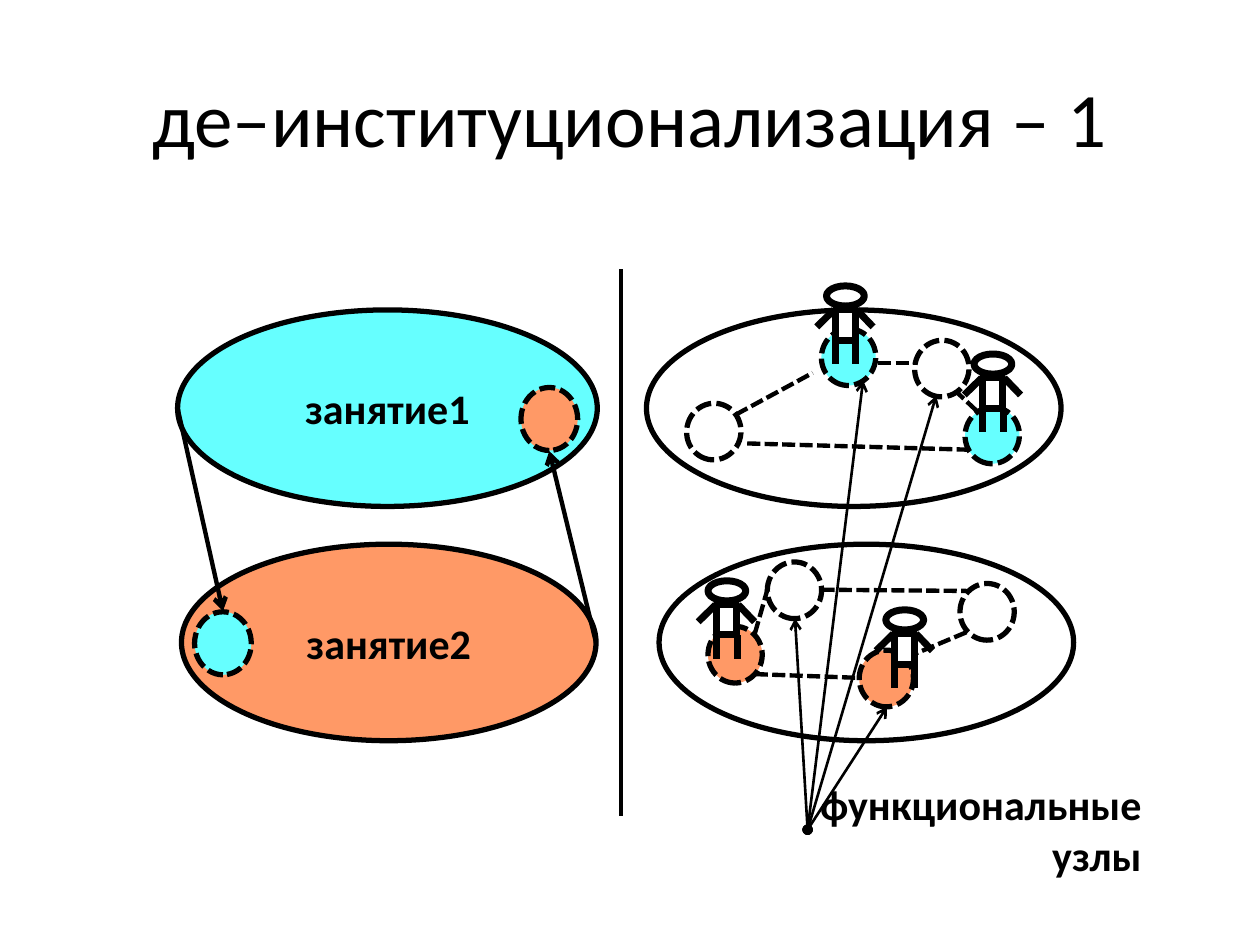
from dataclasses import dataclass
from typing import NamedTuple, Optional

from lxml import etree
from pptx import Presentation
from pptx.dml.color import RGBColor
from pptx.enum.dml import MSO_LINE
from pptx.enum.shapes import MSO_CONNECTOR, MSO_SHAPE
from pptx.enum.text import MSO_ANCHOR, PP_ALIGN
from pptx.oxml.ns import qn
from pptx.util import Pt

OVAL, RECTANGLE = MSO_SHAPE.OVAL, MSO_SHAPE.RECTANGLE
STRAIGHT = MSO_CONNECTOR.STRAIGHT
DASH = MSO_LINE.SQUARE_DOT
CENTER, RIGHT = PP_ALIGN.CENTER, PP_ALIGN.RIGHT
MIDDLE = MSO_ANCHOR.MIDDLE
LEFT_SIDE = 1


@dataclass(frozen=True)
class Theme:
    font: str = "Calibri"
    ink: str = "000000"
    paper: str = "FFFFFF"
    cyan: str = "66FFFF"
    orange: str = "FF9966"
    title_size: float = 44
    label_size: float = 24
    outline: float = 3
    link: float = 2.5
    divider: float = 2.25
    pointer: float = 1.5
    figure: float = 4


THEME = Theme()


class Box(NamedTuple):
    left: float
    top: float
    width: float
    height: float


class Segment(NamedTuple):
    x1: float
    y1: float
    x2: float
    y2: float


class Node(NamedTuple):
    left: float
    top: float
    turn: float
    fill: Optional[str] = None
    width: float = 32.4
    height: float = 31


class Domain(NamedTuple):
    box: Box
    fill: Optional[str] = None
    text: str = ""


# Left half: two occupations, each holding a piece of the other
DOMAINS = [
    Domain(Box(103.7, 311, 236.9, 112.3), THEME.orange, "занятие2"),
    Domain(Box(101.5, 177.1, 239.8, 112.3), THEME.cyan, "занятие1"),
    Domain(Box(369.4, 177.1, 236.9, 112.3)),
    Domain(Box(376.6, 311, 236.9, 112.3)),
]
EXCHANGED = [
    Node(109.4, 351.4, 270, THEME.cyan, 36, 32.4),
    Node(295.9, 223.2, 270, THEME.orange, 36, 32.4),
]
EXCHANGES = [Segment(101.5, 233.3, 127.4, 349.2), Segment(340.6, 367.2, 313.9, 257.8)]

# Right half: networks of functional nodes
LOWER_NODES = [Node(437.8, 321.8, 270), Node(547.9, 334.1, 270),
               Node(490.3, 372.2, 270, THEME.orange)]
LOWER_LINKS = [Segment(431.3, 362.2, 438.5, 337), Segment(431.3, 385.2, 491.8, 387.4),
               Segment(517.7, 375.8, 553.7, 360.7), Segment(469.4, 337, 553.7, 337.7)]
UPPER_NODES = [Node(391.7, 231.1, 281.2), Node(522, 195.1, 281.2),
               Node(550.8, 233.3, 281.2, THEME.cyan)]
UPPER_LINKS = [Segment(420.5, 236.9, 464.4, 213.1), Segment(427, 253.4, 554.4, 257),
               Segment(558, 234.7, 546.5, 223.9), Segment(491.8, 207.4, 522.7, 207.4)]
FRONT_NODES = [Node(403.9, 358.6, 270, THEME.orange), Node(468.7, 188.6, 281.2, THEME.cyan)]
POINTER_ENDS = [(454.3, 353.5), (493.2, 217.4), (506.9, 403.9), (535, 226.1)]

# Stick figures: positions, and limbs relative to the head's corner
PEOPLE = [(472.3, 163.4), (556.6, 202.3), (404.6, 331.9), (506.2, 348.5)]
LIMBS = [Segment(5, 31, 5, 44.8), Segment(16.6, 31, 16.6, 44.8),
         Segment(17.3, 13.7, 26.6, 23.4), Segment(4.3, 13.7, -5.6, 23.4)]


def add_text(frame, text: str, size: float, align, bold: bool = False) -> None:
    para = frame.paragraphs[0]
    para.alignment = align
    span = para.add_run()
    span.text = text
    span.font.name = THEME.font
    span.font.size = Pt(size)
    span.font.bold = bold
    span.font.color.rgb = RGBColor.from_string(THEME.ink)


def add_outlined(shapes, kind, box: Box, fill: Optional[str], weight: float = THEME.outline):
    shape = shapes.add_shape(kind, *(Pt(value) for value in box))
    shape.shadow.inherit = False
    if fill:
        shape.fill.solid()
        shape.fill.fore_color.rgb = RGBColor.from_string(fill)
    else:
        shape.fill.background()
    shape.line.color.rgb = RGBColor.from_string(THEME.ink)
    shape.line.width = Pt(weight)
    return shape


def add_domain(shapes, domain: Domain) -> None:
    shape = add_outlined(shapes, OVAL, domain.box, domain.fill)
    if domain.text:
        shape.text_frame.vertical_anchor = MIDDLE
        add_text(shape.text_frame, domain.text, THEME.label_size, CENTER, bold=True)


def add_node(shapes, node: Node) -> None:
    box = Box(node.left, node.top, node.width, node.height)
    shape = add_outlined(shapes, OVAL, box, node.fill)
    shape.rotation = node.turn
    shape.line.dash_style = DASH


def add_segment(shapes, segment: Segment, weight: float, dashed: bool = False,
                head: str = "", tail: str = ""):
    line = shapes.add_connector(STRAIGHT, *(Pt(value) for value in segment))
    line.line.color.rgb = RGBColor.from_string(THEME.ink)
    line.line.width = Pt(weight)
    if dashed:
        line.line.dash_style = DASH
    properties = line._element.spPr
    outline = properties.find(qn("a:ln"))
    for tag, ending in (("a:headEnd", head), ("a:tailEnd", tail)):
        if ending:
            etree.SubElement(outline, qn(tag), type=ending)
    etree.SubElement(properties, qn("a:effectLst"))
    return line


def add_network(shapes, nodes: list[Node], links: list[Segment]) -> None:
    for node in nodes:
        add_node(shapes, node)
    for link in links:
        add_segment(shapes, link, THEME.link, dashed=True)


def add_person(page, left: float, top: float) -> None:
    shapes = page.shapes.add_group_shape().shapes
    head = Box(left, top, 21.6, 11.5)
    body = Box(left + 5, top + 13.7, 11.5, 17.3)
    add_outlined(shapes, OVAL, head, THEME.paper, THEME.figure)
    add_outlined(shapes, RECTANGLE, body, THEME.paper, THEME.figure)
    for limb in LIMBS:
        moved = Segment(left + limb.x1, top + limb.y1, left + limb.x2, top + limb.y2)
        add_segment(shapes, moved, THEME.figure)


def add_pointers(shapes) -> None:
    label = shapes.add_textbox(Pt(461.5), Pt(441.4), Pt(190.8), Pt(65.5))
    frame = label.text_frame
    frame.word_wrap = True
    frame.margin_left = frame.margin_right = Pt(0)
    add_text(frame, "функциональные узлы", THEME.label_size, RIGHT, bold=True)
    for x, y in POINTER_ENDS:
        pointer = add_segment(shapes, Segment(461.5, 474.1, x, y), THEME.pointer,
                              head="oval", tail="arrow")
        pointer.begin_connect(label, LEFT_SIDE)


def main() -> None:
    deck = Presentation()
    deck.slide_width, deck.slide_height = Pt(720), Pt(540)
    page = deck.slides.add_slide(deck.slide_layouts[5])
    shapes = page.shapes

    # Title
    title = shapes.title
    title.left, title.top, title.width, title.height = Pt(36), Pt(21.6), Pt(648), Pt(90)
    title.text_frame.vertical_anchor = MIDDLE
    add_text(title.text_frame, "де–институционализация – 1", THEME.title_size, CENTER)

    # Divider, occupations and their exchange
    add_segment(shapes, Segment(355, 154, 355, 466.5), THEME.divider)
    for domain in DOMAINS:
        add_domain(shapes, domain)
    for node in EXCHANGED:
        add_node(shapes, node)
    for exchange in EXCHANGES:
        add_segment(shapes, exchange, THEME.link, tail="arrow")

    # Networks, pointers and people
    add_network(shapes, LOWER_NODES, LOWER_LINKS)
    add_network(shapes, UPPER_NODES, UPPER_LINKS)
    add_network(shapes, FRONT_NODES, [])
    add_pointers(shapes)
    for left, top in PEOPLE:
        add_person(page, left, top)

    deck.save("out.pptx")


if __name__ == "__main__":
    main()
